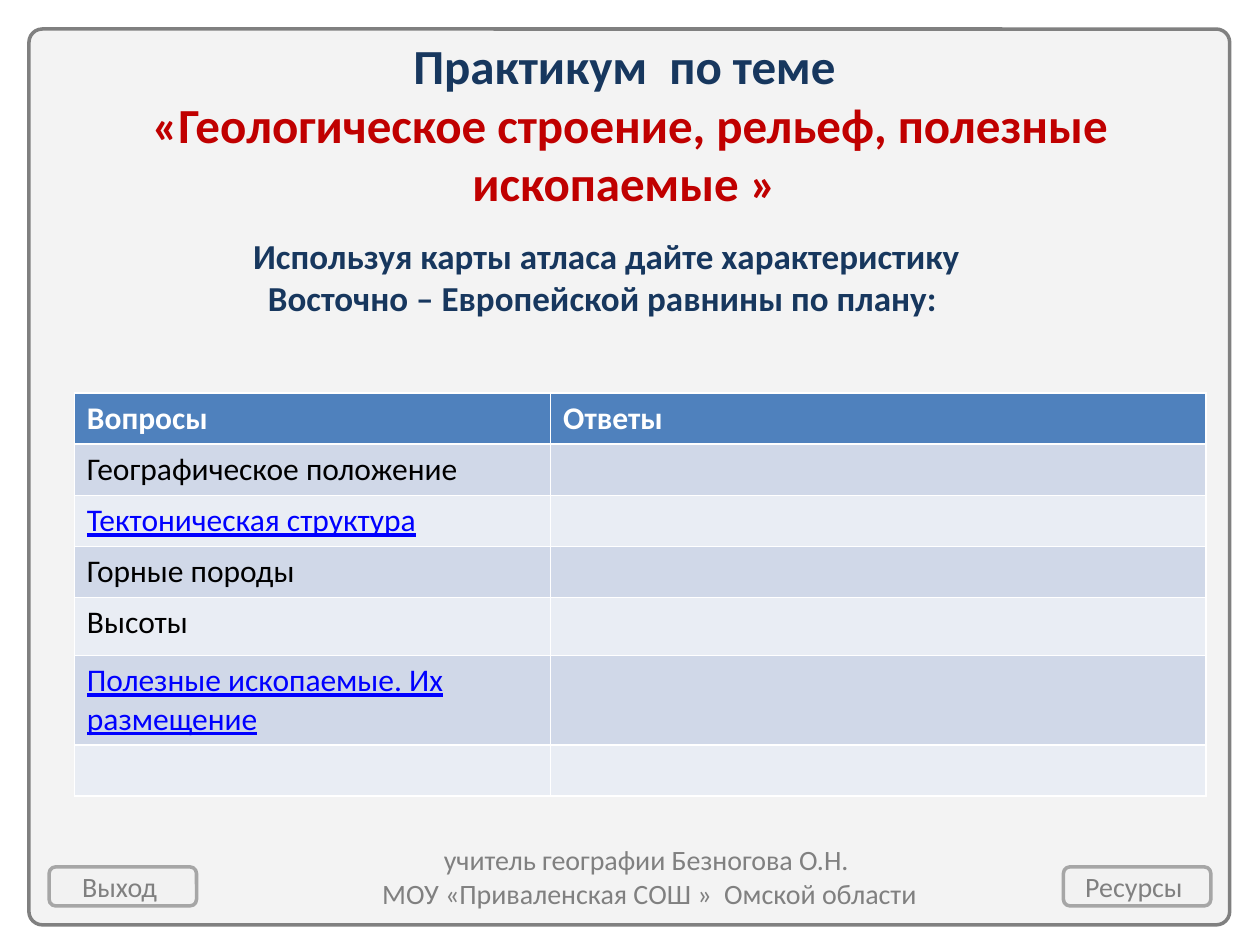
from pptx import Presentation, util as u
from pptx.dml.color import RGBColor
from pptx.enum import shapes, text
from pptx.oxml.ns import qn
from lxml import etree

THEME = dict(
    font="Calibri", navy="17375E", red="C00000", gray="808080", rim="A6A6A6",
    panel="F2F2F2", head="4F81BD", bands=("D0D8E8", "E9EDF4"),
    white="FFFFFF", black="000000", link="0000FF",
    title=28, task=20, cell=18, note=16)

deck = Presentation()
deck.slide_width, deck.slide_height = u.Inches(10), u.Inches(7.5)
slide = deck.slides.add_slide(deck.slide_layouts[1])
tree = slide.shapes


def box(*parts):
    """Turn left, top, width, height in percent of the slide into lengths."""
    sides = (deck.slide_width, deck.slide_height) * 2
    return [int(side * part / 100) for side, part in zip(sides, parts)]


def style(par, size, color, bold=False, align=text.PP_ALIGN.CENTER):
    par.alignment = align
    par.space_before = u.Pt(0)
    font = par.font
    font.name, font.size, font.bold = THEME["font"], u.Pt(THEME[size]), bold
    font.color.rgb = RGBColor.from_string(THEME[color])


# Frame and buttons
panels = [
    ((2.3, 3.07, 95.3, 94.8), "gray", 0.015, ""),
    ((3.9, 91.73, 11.7, 4.13), "rim", 0.1667, "Выход "),
    ((84.4, 91.73, 11.7, 4.13), "rim", 0.1667, "Ресурсы "),
]
for level, (area, rim, curve, label) in enumerate(panels):
    panel = tree.add_shape(shapes.MSO_SHAPE.ROUNDED_RECTANGLE, *box(*area))
    panel.adjustments[0] = curve
    panel.shadow.inherit = False
    panel.fill.solid()
    panel.fill.fore_color.rgb = RGBColor.from_string(THEME["panel"])
    tint = panel._element.spPr.find(qn("a:solidFill"))[0]
    etree.SubElement(tint, qn("a:alpha"), val="90000")
    panel.line.color.rgb = RGBColor.from_string(THEME[rim])
    panel.line.width = u.Pt(2)
    if label:
        panel.text_frame.text = label
        panel.text_frame.vertical_anchor = text.MSO_ANCHOR.MIDDLE
        style(panel.text_frame.paragraphs[0], "note", "gray")
    # Panels lie behind the placeholders
    tree._spTree.insert(2 + level, panel._element)

# Title, task and author
title, task = tree.title, slide.placeholders[1]
note = tree.add_textbox(*box(19.5, 88.53, 64.1, 8.53))
blocks = [
    (title, (2.3, 3.07, 94.5, 20.13), "title", "navy", True,
     "Практикум  по теме\v «Геологическое строение, рельеф, полезные ископаемые »"),
    (task, (4.3, 24.13, 88.3, 10.4), "task", "navy", True,
     "Используя карты атласа дайте характеристику \n"
     "Восточно – Европейской равнины по плану:  "),
    (note, (19.5, 88.53, 64.1, 8.53), "note", "gray", False,
     "учитель географии Безногова О.Н. \n"
     "МОУ «Приваленская СОШ »  Омской области"),
]
for item, area, size, color, bold, words in blocks:
    item.left, item.top, item.width, item.height = box(*area)
    frame = item.text_frame
    frame.text = words
    frame.word_wrap = True
    frame.auto_size = text.MSO_AUTO_SIZE.NONE
    frame.vertical_anchor = text.MSO_ANCHOR.TOP
    for par in frame.paragraphs:
        if item is task:
            props = par._p.get_or_add_pPr()
            props.set("marL", "0")
            props.set("indent", "0")
            etree.SubElement(props, qn("a:buNone"))
        style(par, size, color, bold)
topic = title.text_frame.paragraphs[0].runs[-1]
topic.font.color.rgb = RGBColor.from_string(THEME["red"])

# Question table: text, row height in percent, linked look
rows = [
    ("Вопросы", 5.33, False),
    ("Географическое положение", 5.33, False),
    ("Тектоническая структура", 5.33, True),
    ("Горные породы", 5.33, False),
    ("Высоты", 6.13, False),
    ("Полезные ископаемые. Их размещение", 9.33, True),
    ("", 5.33, False),
]
grid = tree.add_table(len(rows), 2, *box(5.9, 41.6, 89.8, 42.13)).table
for col, share in zip(grid.columns, (37.8, 52)):
    col.width = int(deck.slide_width * share / 100)
for r, (ask, share, linked) in enumerate(rows):
    grid.rows[r].height = int(deck.slide_height * share / 100)
    for c, words in enumerate((ask, "" if r else "Ответы")):
        cell = grid.cell(r, c)
        cell.text = words
        cell.fill.solid()
        cell.fill.fore_color.rgb = RGBColor.from_string(
            THEME["bands"][(r - 1) % 2] if r else THEME["head"])
        color = "white" if r == 0 else "link" if linked else "black"
        par = cell.text_frame.paragraphs[0]
        style(par, "cell", color, r == 0, text.PP_ALIGN.LEFT)
        par.font.underline = linked

deck.save("out.pptx")
